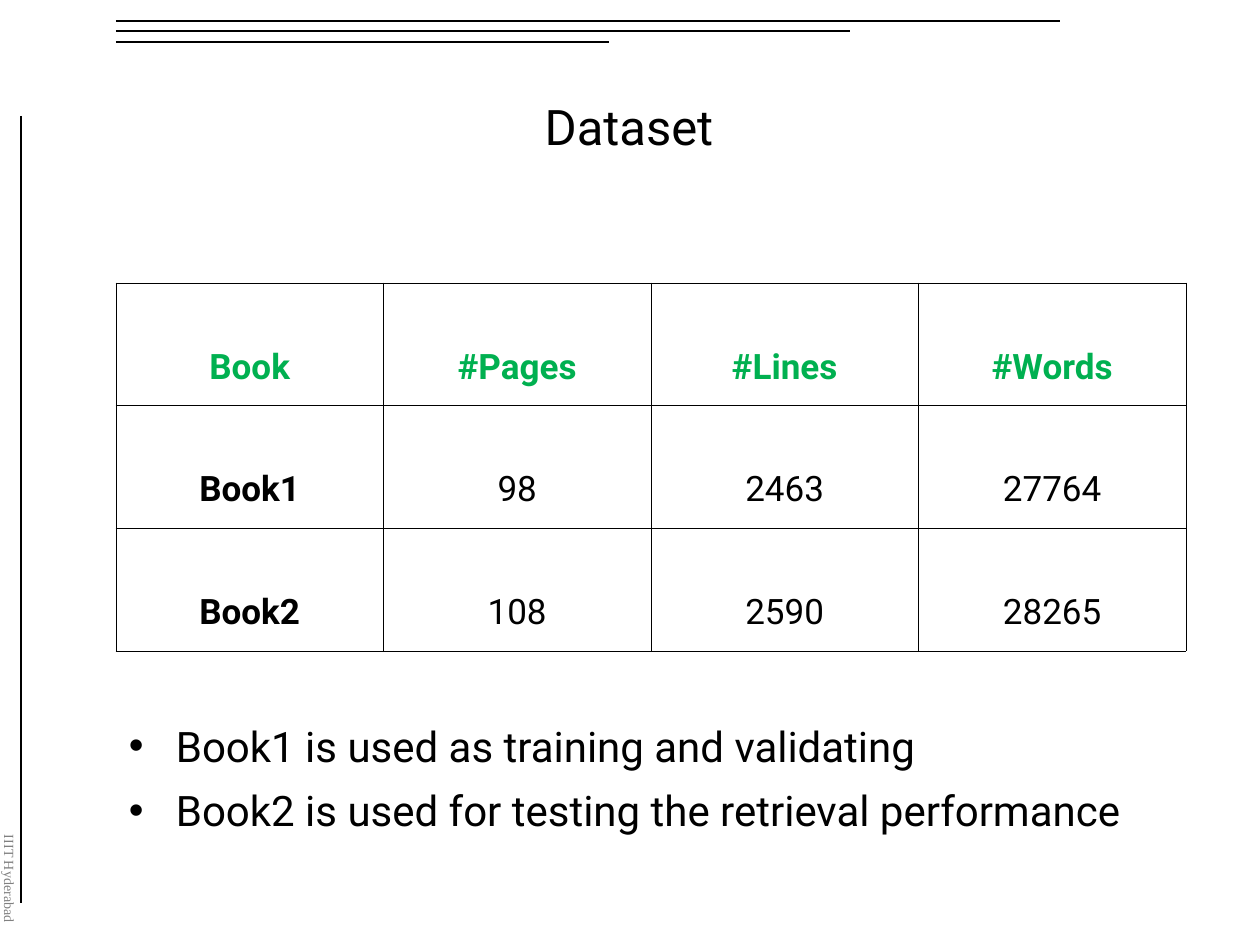
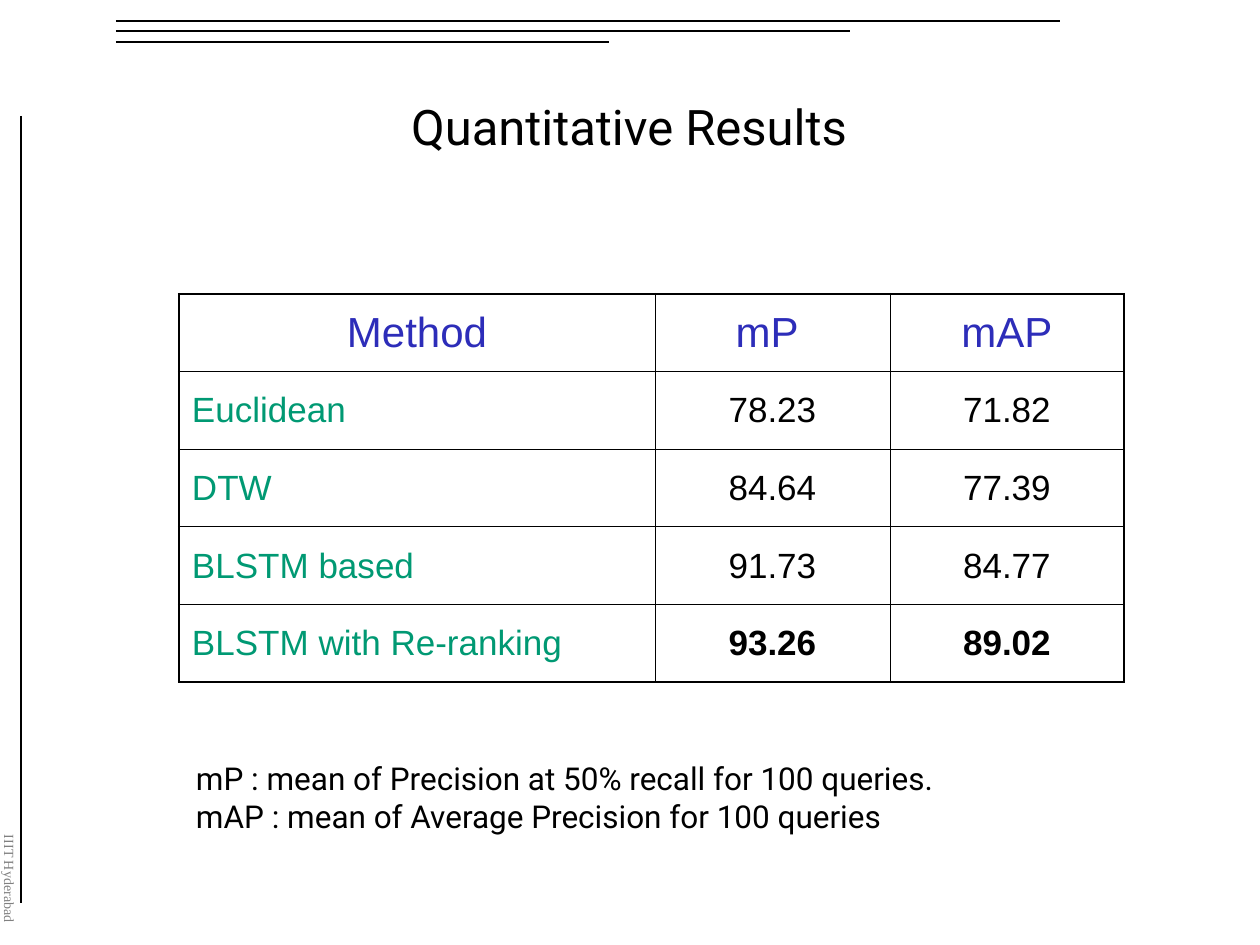
import pptx
import pptx.dml.color
import pptx.enum.shapes
import pptx.enum.text
import pptx.oxml.ns
import pptx.util
import lxml.etree

PX_PER_INCH = 126
BLACK, WHITE, GRAY = "000000", "FFFFFF", "808080"
GREEN, BLUE, TEAL = "00B050", "2D2DB9", "009973"
CENTER = pptx.enum.text.PP_ALIGN.CENTER
LEFT = pptx.enum.text.PP_ALIGN.LEFT
BOTTOM = pptx.enum.text.MSO_ANCHOR.BOTTOM
MIDDLE = pptx.enum.text.MSO_ANCHOR.MIDDLE
THIN, THICK = 0.45, 1.47


def px(length):
    return pptx.util.Emu(round(length * 914400 / PX_PER_INCH))


def color(hex_string):
    return pptx.dml.color.RGBColor.from_string(hex_string)


def add_element(parent, tag, **attributes):
    return lxml.etree.SubElement(parent, pptx.oxml.ns.qn(tag), attributes)


class SlideWriter:
    def __init__(self, deck):
        self.deck = deck
        self.font = "Roboto"
        self.page = None

    def start_page(self, title):
        self.page = self.deck.slides.add_slide(self.deck.slide_layouts[6])
        for index, right in enumerate((1060, 850, 609)):
            y = 21 + index * 21 // 2
            self.line(116, y, right, y)
        self.line(21, 116, 21, 903)
        footer = self.text(-11, 829, 42, 116, ["IIIT Hyderabad"], 8,
                           font="Times New Roman", ink=GRAY)
        footer.text_frame._txBody.bodyPr.set("vert", "eaVert")
        self.text(94, 84, 1070, 156, [title], 28, align=CENTER, top=13)

    def line(self, x1, y1, x2, y2):
        line = self.page.shapes.add_connector(
            pptx.enum.shapes.MSO_CONNECTOR.STRAIGHT, px(x1), px(y1), px(x2), px(y2))
        line.line.color.rgb = color(BLACK)
        line.line.width = pptx.util.Pt(0.75)
        add_element(line._element.spPr, "a:effectLst")

    def style(self, para, size, font=None, ink=BLACK, bold=False, align=LEFT):
        para.alignment = align
        for span in para.runs:
            span.font.name = font or self.font
            span.font.size = pptx.util.Pt(size)
            span.font.bold = bold
            span.font.color.rgb = color(ink)

    def text(self, x, y, width, height, lines, size, top=6, gap=0, bullet=False, **look):
        box = self.page.shapes.add_textbox(px(x), px(y), px(width), px(height))
        frame = box.text_frame
        frame.word_wrap = True
        frame.margin_left = frame.margin_right = px(13)
        frame.margin_top, frame.margin_bottom = px(top), px(6)
        frame.text = "\n".join(lines)
        for index, para in enumerate(frame.paragraphs):
            if index and gap:
                para.space_before = pptx.util.Pt(gap)
            if bullet:
                self.bullet(para)
            self.style(para, size, **look)
        return box

    def bullet(self, para):
        properties = para._p.get_or_add_pPr()
        properties.set("marL", str(px(47)))
        properties.set("indent", str(-px(47)))
        add_element(properties, "a:buFont", typeface="Arial")
        add_element(properties, "a:buChar", char="•")

    def border(self, cell, side, weight):
        edge = add_element(cell._tc.get_or_add_tcPr(), "a:ln" + side,
                           w=str(pptx.util.Pt(weight)))
        add_element(add_element(edge, "a:solidFill"), "a:srgbClr", val=BLACK)

    def table(self, x, y, height, widths, rows, look, anchor, top, bottom,
              frame_weight=THIN, spacing=None):
        table = self.page.shapes.add_table(
            len(rows), len(widths), px(x), px(y), px(sum(widths)), px(height)).table
        table.first_row = table.horz_banding = False
        for column, width in zip(table.columns, widths):
            column.width = px(width)
        for r, row in enumerate(rows):
            table.rows[r].height = px(height / len(rows))
            for c, value in enumerate(row):
                cell = table.cell(r, c)
                cell.text = value
                cell.vertical_anchor = anchor
                cell.margin_left = cell.margin_right = px(13)
                cell.margin_top, cell.margin_bottom = px(top), px(bottom)
                outer = {"L": c == 0, "R": c == len(row) - 1,
                         "T": r == 0, "B": r == len(rows) - 1}
                for side, is_outer in outer.items():
                    self.border(cell, side, frame_weight if is_outer else THIN)
                cell.fill.solid()
                cell.fill.fore_color.rgb = color(WHITE)
                para = cell.text_frame.paragraphs[0]
                if spacing:
                    para.line_spacing = spacing
                self.style(para, **look(r, c))


def dataset_look(row, column):
    return dict(size=20, align=CENTER, bold=row == 0 or column == 0,
                ink=GREEN if row == 0 else BLACK)


def results_look(row, column):
    if row == 0:
        return dict(size=24, font="Arial", ink=BLUE, align=CENTER)
    if column == 0:
        return dict(size=20, font="Arial", ink=TEAL)
    return dict(size=20, font="Arial", bold=row == 4, align=CENTER)


def add_dataset(writer):
    writer.start_page("Dataset")
    rows = [("Book", "#Pages", "#Lines", "#Words"),
            ("Book1", "98", "2463", "27764"),
            ("Book2", "108", "2590", "28265")]
    writer.table(116, 283, 368, [267.5] * 4, rows, dataset_look, BOTTOM, 6, 18)
    writer.text(116, 714, 1048, 168,
                ["Book1 is used as training and validating",
                 "Book2 is used for testing the retrieval performance"],
                24, gap=8, bullet=True)


def add_results(writer):
    writer.start_page("Quantitative Results")
    rows = [("Method", "mP ", "mAP"),
            ("Euclidean", "78.23", "71.82"),
            ("DTW", "84.64", "77.39"),
            ("BLSTM based", "91.73", "84.77"),
            ("BLSTM with Re-ranking", "93.26", "89.02")]
    writer.table(179, 294, 388, [476, 235, 234], rows, results_look, MIDDLE, 9, 6,
                 frame_weight=THICK, spacing=0.93)
    writer.text(183, 746, 775, 94,
                ["mP : mean of Precision at 50% recall for 100 queries.",
                 "mAP : mean of Average Precision for 100 queries"],
                18, top=13)


def main():
    deck = pptx.Presentation()
    deck.slide_width, deck.slide_height = px(1260), px(945)
    writer = SlideWriter(deck)
    add_dataset(writer)
    add_results(writer)
    deck.save("out.pptx")


if __name__ == "__main__":
    main()
